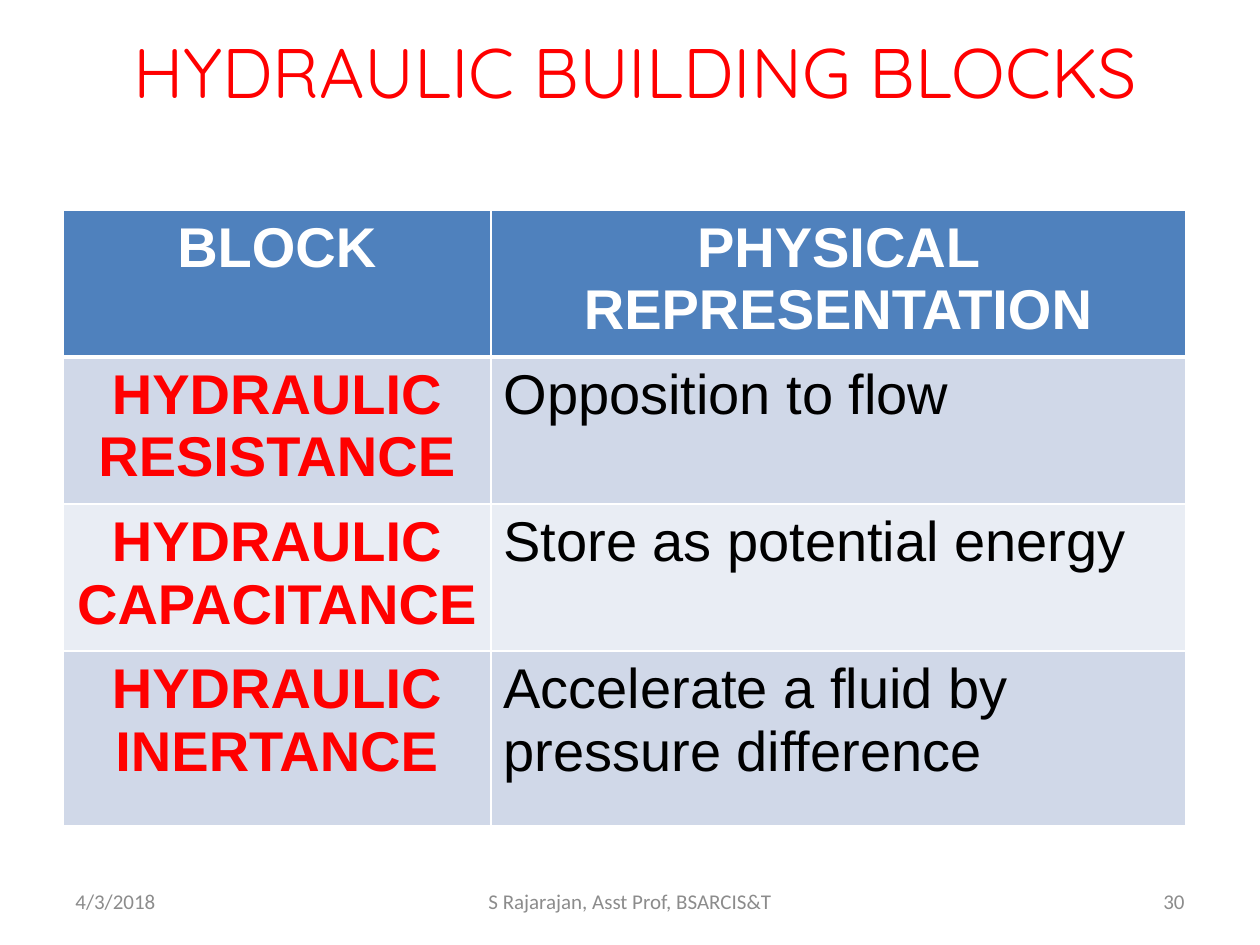
from lxml import etree
from pptx import Presentation
from pptx.dml.color import RGBColor
from pptx.enum import text
from pptx.oxml import ns
from pptx.util import Pt

COLORS = {
    "red": "FF0000",
    "grey": "8C8C8C",
    "white": "FFFFFF",
    "black": "000000",
    "header": "4F81BD",
    "odd": "D0D8E8",
    "even": "E9EDF4",
}
LEFT, CENTER, RIGHT = text.PP_ALIGN.LEFT, text.PP_ALIGN.CENTER, text.PP_ALIGN.RIGHT


def write(frame, words, font="Arial", size=32, color="black", bold=False, align=LEFT):
    frame.word_wrap = True
    para = frame.paragraphs[0]
    para.alignment = align
    span = para.add_run()
    span.text = words
    span.font.name = font
    span.font.size = Pt(size)
    span.font.bold = bold
    span.font.color.rgb = RGBColor.from_string(COLORS[color])


def add_border(cell, side, width):
    """Draw a white line on one side (L, R, T or B); call before filling the cell."""
    props = cell._tc.get_or_add_tcPr()
    line = etree.SubElement(props, ns.qn(f"a:ln{side}"), w=str(Pt(width)))
    fill = etree.SubElement(line, ns.qn("a:solidFill"))
    etree.SubElement(fill, ns.qn("a:srgbClr"), val=COLORS["white"])


deck = Presentation()
deck.slide_width, deck.slide_height = Pt(720), Pt(540)
page = deck.slides.add_slide(deck.slide_layouts[6])

# Title: sits on the bottom of a shallow box and rises above it
title = page.shapes.add_textbox(Pt(-36), Pt(60), Pt(798), Pt(18)).text_frame
title.vertical_anchor = text.MSO_ANCHOR.BOTTOM
title.margin_bottom = Pt(13.5)
write(title, "HYDRAULIC BUILDING BLOCKS", font="Quicksand", size=40, color="red", align=CENTER)

# Table of blocks: the first three rows grow to fit two lines of text
rows = [
    ("BLOCK", "PHYSICAL REPRESENTATION"),
    ("HYDRAULIC RESISTANCE", "Opposition to flow"),
    ("HYDRAULIC CAPACITANCE", "Store as potential energy"),
    ("HYDRAULIC INERTANCE", "Accelerate a fluid by pressure difference"),
]
widths = [244.5, 397]
heights = [42, 55, 55, 100]
table = page.shapes.add_table(
    len(rows), len(widths), Pt(36), Pt(120), Pt(sum(widths)), Pt(sum(heights))
).table
for column, width in zip(table.columns, widths):
    column.width = Pt(width)
for row, height in zip(table.rows, heights):
    row.height = Pt(height)

for r, words in enumerate(rows):
    band = "header" if r == 0 else "odd" if r % 2 else "even"
    for c, label in enumerate(words):
        cell = table.cell(r, c)
        for side in "LRTB":
            under_header = (r, side) in [(0, "B"), (1, "T")]
            add_border(cell, side, 3 if under_header else 1)
        cell.fill.solid()
        cell.fill.fore_color.rgb = RGBColor.from_string(COLORS[band])
        strong = r == 0 or c == 0
        color = "white" if r == 0 else "red" if c == 0 else "black"
        write(cell.text_frame, label, color=color, bold=strong, align=CENTER if strong else LEFT)

# Footer
for left, width, words, align in [
    (36, 168, "4/3/2018", LEFT),
    (246, 228, "S Rajarajan, Asst Prof, BSARCIS&T", CENTER),
    (516, 168, "30", RIGHT),
]:
    footer = page.shapes.add_textbox(Pt(left), Pt(500.5), Pt(width), Pt(28.75)).text_frame
    footer.vertical_anchor = text.MSO_ANCHOR.MIDDLE
    write(footer, words, font="Calibri", size=12, color="grey", align=align)

deck.save("out.pptx")
